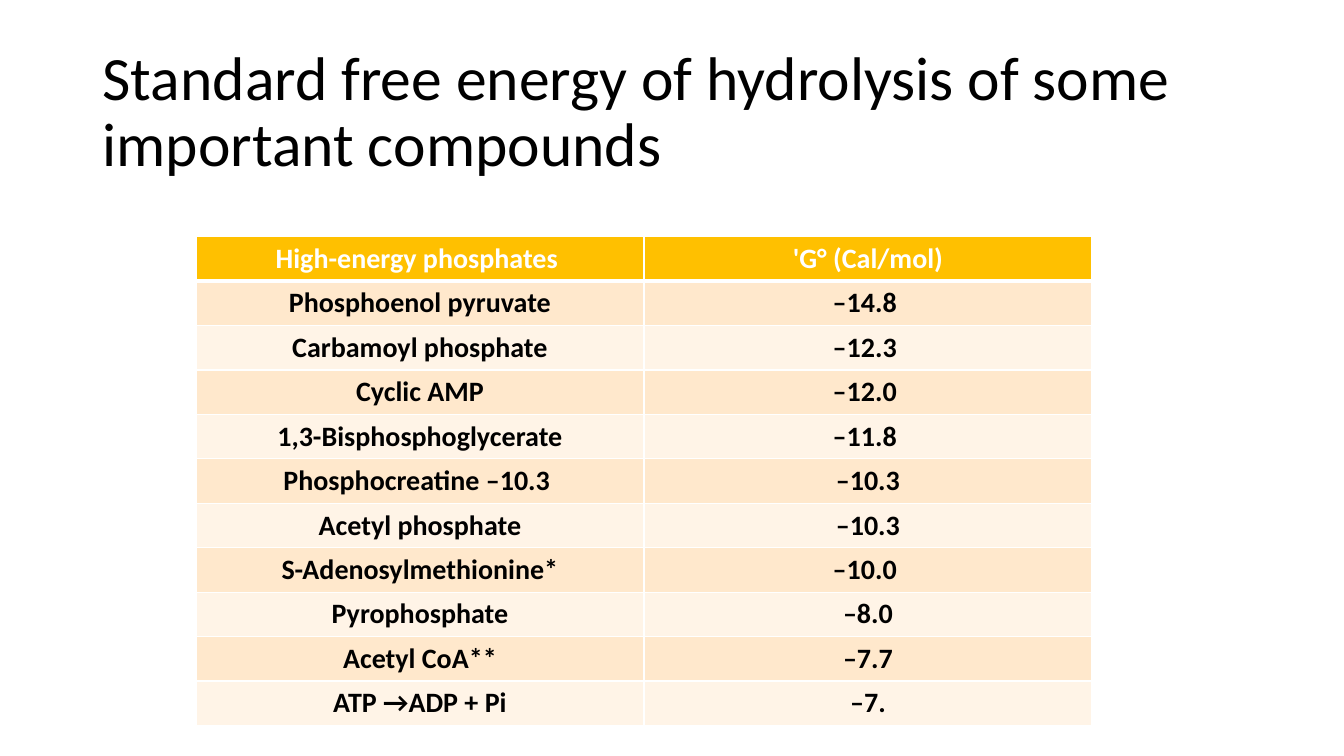
import pptx
import pptx.dml.color
import pptx.enum.text
import pptx.oxml
import pptx.oxml.ns
import pptx.util

RGB = pptx.dml.color.RGBColor
WHITE = RGB(0xFF, 0xFF, 0xFF)
BLACK = RGB(0, 0, 0)
GOLD = RGB(0xFF, 0xC0, 0x00)
BANDS = (RGB(0xFF, 0xF4, 0xE7), RGB(0xFF, 0xE8, 0xCC))

WIDTH, HEIGHT = pptx.util.Inches(13.33), pptx.util.Inches(7.5)
CENTER = pptx.enum.text.PP_ALIGN.CENTER
LEFT = pptx.enum.text.PP_ALIGN.LEFT
MIDDLE = pptx.enum.text.MSO_ANCHOR.MIDDLE

TITLE = "Standard free energy of hydrolysis of some important compounds"
ROWS = (
    ("High-energy phosphates ", "'G° (Cal/mol)"),
    ("Phosphoenol pyruvate", "–14.8 "),
    ("Carbamoyl phosphate", "–12.3 "),
    ("Cyclic AMP", "–12.0 "),
    ("1,3-Bisphosphoglycerate", "–11.8 "),
    ("Phosphocreatine –10.3 ", "–10.3"),
    ("Acetyl phosphate", "–10.3"),
    ("S-Adenosylmethionine*", "–10.0 "),
    ("Pyrophosphate", "–8.0"),
    ("Acetyl CoA**", "–7.7"),
    ("ATP →ADP + Pi", "–7."),
)


def box(left, top, width, height):
    """Turn shares of the slide's size into lengths."""
    return (int(left * WIDTH), int(top * HEIGHT),
            int(width * WIDTH), int(height * HEIGHT))


def write(tf, text, color, align, **font):
    p = tf.paragraphs[0]
    p.alignment = align
    r = p.add_run()
    r.text = text
    r.font.color.rgb = color
    for name, value in {"name": "Calibri", **font}.items():
        setattr(r.font, name, value)
    return p


def add_title(slide, text, place):
    tf = slide.shapes.add_textbox(*place).text_frame
    tf.word_wrap = True
    tf.vertical_anchor = MIDDLE
    p = write(tf, text, BLACK, LEFT, size=pptx.util.Pt(44))
    p.line_spacing = 0.9


def add_borders(cell, widths):
    """Draw white cell borders; widths maps L, R, T, B to points."""
    for side, width in widths.items():
        cell._tc.get_or_add_tcPr().append(pptx.oxml.parse_xml(
            f'<a:ln{side} {pptx.oxml.ns.nsdecls("a")} w="{pptx.util.Pt(width)}">'
            f'<a:solidFill><a:srgbClr val="{WHITE}"/></a:solidFill></a:ln{side}>'))


def add_table(slide, rows, place):
    table = slide.shapes.add_table(len(rows), len(rows[0]), *place).table
    for i, row in enumerate(rows):
        header = i == 0
        for j, text in enumerate(row):
            cell = table.cell(i, j)
            add_borders(cell, {"L": 1, "R": 1, "T": 3 if i == 1 else 1,
                               "B": 3 if header else 1})
            cell.fill.solid()
            cell.fill.fore_color.rgb = GOLD if header else BANDS[i % 2]
            write(cell.text_frame, text, WHITE if header else BLACK, CENTER,
                  size=pptx.util.Pt(20), bold=True)


def main():
    prs = pptx.Presentation()
    prs.slide_width, prs.slide_height = WIDTH, HEIGHT
    slide = prs.slides.add_slide(prs.slide_layouts[6])
    add_table(slide, ROWS, box(0.1458, 0.3133, 0.6667, 0.636))
    add_title(slide, TITLE, box(0.069, 0.0533, 0.8627, 0.1933))
    prs.save("out.pptx")


if __name__ == "__main__":
    main()
